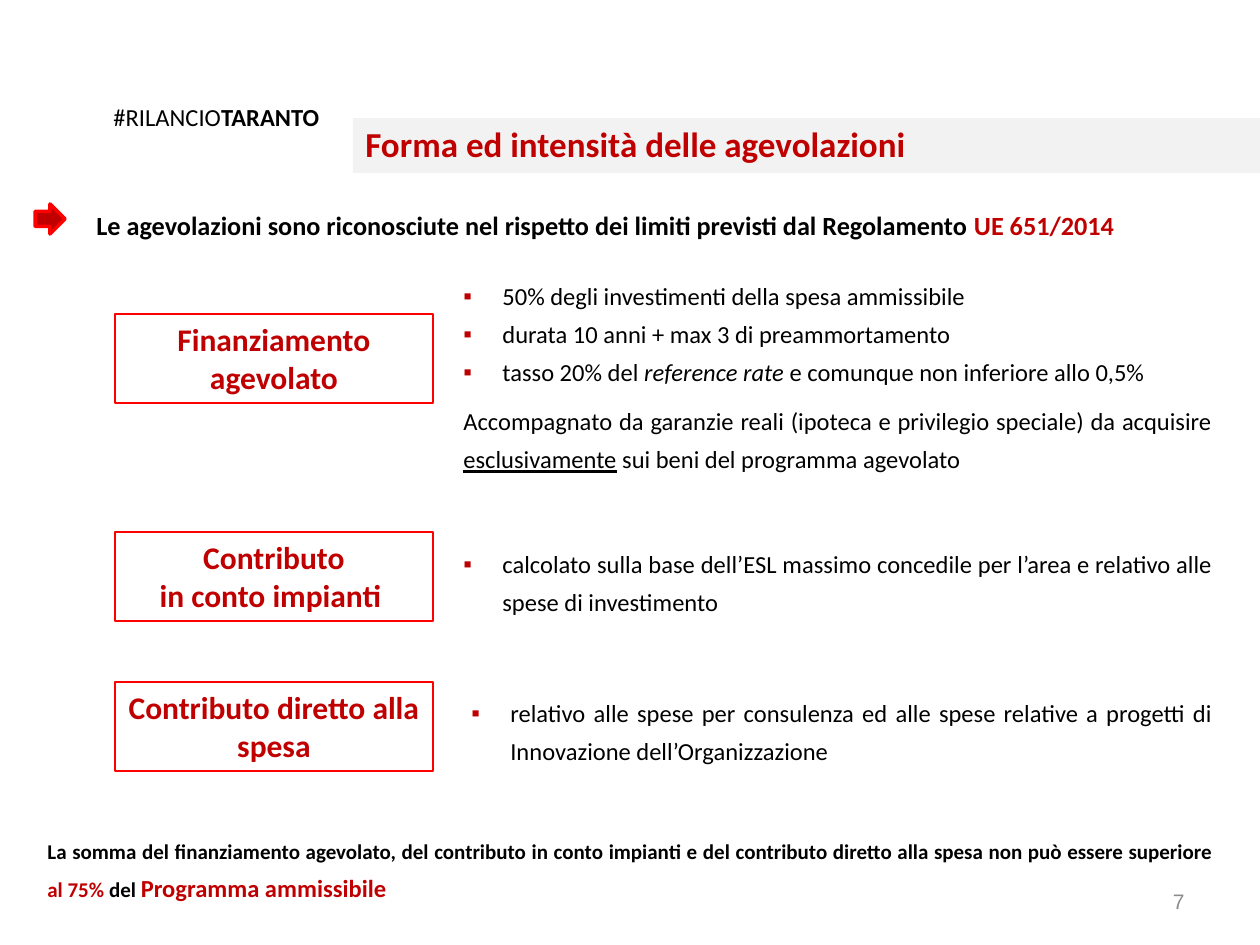
from lxml.etree import SubElement
from pptx import Presentation
from pptx.dml.color import RGBColor
from pptx.enum.shapes import MSO_SHAPE
from pptx.enum.text import MSO_ANCHOR, PP_ALIGN
from pptx.oxml.ns import qn
from pptx.util import Emu, Pt

PX = 914400 / 126
BLACK = RGBColor(0, 0, 0)
DARK_RED = RGBColor(0xC0, 0, 0)
RED = RGBColor(0xFF, 0, 0)
PALE_GREY = RGBColor(0xF2, 0xF2, 0xF2)
GREY = RGBColor(0x8C, 0x8C, 0x8C)

# A paragraph is a list of spans: (text, format that differs from the box)
TAG = [[("#RILANCIO", {}), ("TARANTO", {"bold": True})]]
TITLE = [[("Forma ed intensità delle agevolazioni", {})]]
INTRO = [[
    ("Le agevolazioni sono riconosciute nel rispetto dei limiti previsti dal Regolamento ", {}),
    ("UE 651/2014", {"color": DARK_RED}),
]]
FOOTER = [[
    ("La somma del finanziamento agevolato, del contributo in conto impianti e del "
     "contributo diretto alla spesa non può essere superiore ", {}),
    ("al 75% ", {"color": DARK_RED}),
    ("del ", {}),
    ("Programma ammissibile", {"color": DARK_RED, "size": 14}),
]]
PAGE_NUMBER = [[("7", {})]]

LOAN_TERMS = [
    [("50% degli investimenti della spesa ammissibile", {})],
    [("durata 10 anni + max 3 di preammortamento", {})],
    [("tasso 20% del ", {}), ("reference rate ", {"italic": True}),
     ("e comunque non inferiore allo 0,5%", {})],
    [("Accompagnato da garanzie reali (ipoteca e privilegio speciale) da acquisire ", {}),
     ("esclusivamente", {"underline": True}),
     (" sui beni del programma agevolato", {})],
]
PLANT_TERMS = [[("calcolato sulla base dell’ESL massimo concedile per l’area e relativo "
                 "alle spese di investimento", {})]]
EXPENSE_TERMS = [[("relativo alle spese per consulenza ed alle spese relative a progetti di "
                   "Innovazione dell’Organizzazione", {})]]

# label lines, label top, terms, bulleted paragraphs, terms left, top, height
MEASURES = [
    (["Finanziamento agevolato"], 314, LOAN_TERMS, 3, 451, 266, 217),
    (["Contributo", "in conto impianti "], 532, PLANT_TERMS, 1, 451, 534, 87),
    (["Contributo diretto alla", "spesa"], 682, EXPENSE_TERMS, 1, 459, 683, 89),
]
LABEL_LEFT, LABEL_WIDTH, LABEL_HEIGHT = 115, 318, 89
TERMS_RIGHT = 1225
BULLET_INDENT = 39


def px(value):
    return Emu(round(value * PX))


def add_bullet(paragraph):
    properties = paragraph._p.get_or_add_pPr()
    properties.set("marL", str(px(BULLET_INDENT)))
    properties.set("indent", str(-px(BULLET_INDENT)))
    color = SubElement(properties, qn("a:buClr"))
    SubElement(color, qn("a:srgbClr")).set("val", str(DARK_RED))
    SubElement(properties, qn("a:buFont")).set("typeface", "Arial")
    SubElement(properties, qn("a:buChar")).set("char", "▪")


def write(frame, paragraphs, size=14, color=BLACK, bold=False, font="Calibri",
          align=PP_ALIGN.LEFT, spacing=None, bullets=0, wrap=True, anchor=MSO_ANCHOR.TOP):
    """Fill a text frame; the first `bullets` paragraphs are list items."""
    frame.word_wrap = wrap
    frame.vertical_anchor = anchor
    for index, spans in enumerate(paragraphs):
        paragraph = frame.paragraphs[0] if index == 0 else frame.add_paragraph()
        paragraph.alignment = align
        if spacing:
            paragraph.line_spacing = spacing
        if bullets and index == bullets:
            paragraph.space_before = Pt(6)
        if index < bullets:
            add_bullet(paragraph)
        for text, own in spans:
            span = paragraph.add_run()
            span.text = text
            span.font.name = font
            span.font.size = Pt(own.get("size", size))
            span.font.bold = own.get("bold", bold)
            span.font.italic = own.get("italic", False)
            span.font.underline = own.get("underline", False)
            span.font.color.rgb = own.get("color", color)


def add_text(page, area, paragraphs, **text_format):
    box = page.shapes.add_textbox(*map(px, area))
    write(box.text_frame, paragraphs, **text_format)


def add_panel(page, area, kind=MSO_SHAPE.RECTANGLE, fill=None, line=None, width=0.75):
    panel = page.shapes.add_shape(kind, *map(px, area))
    panel.shadow.inherit = False
    if fill is None:
        panel.fill.background()
    else:
        panel.fill.solid()
        panel.fill.fore_color.rgb = fill
    if line is None:
        panel.line.fill.background()
    else:
        panel.line.color.rgb = line
        panel.line.width = Pt(width)
    return panel


def add_measure(page, label, label_top, terms, bullets, left, top, height):
    panel = add_panel(page, (LABEL_LEFT, label_top, LABEL_WIDTH, LABEL_HEIGHT), line=RED)
    write(panel.text_frame, [[(line, {})] for line in label],
          size=18, color=DARK_RED, bold=True, align=PP_ALIGN.CENTER)
    add_text(page, (left, top, TERMS_RIGHT - left, height), terms,
             align=PP_ALIGN.JUSTIFY, spacing=1.3, bullets=bullets)


def main():
    deck = Presentation()
    deck.slide_width, deck.slide_height = px(1260), px(945)
    page = deck.slides.add_slide(deck.slide_layouts[6])

    add_text(page, (101, 96, 232, 43), TAG, wrap=False)
    add_panel(page, (353, 118, 907, 55), fill=PALE_GREY)
    add_text(page, (353, 116, 893, 55), TITLE, size=20, color=DARK_RED, bold=True)
    add_panel(page, (35, 204, 30, 30), kind=MSO_SHAPE.RIGHT_ARROW,
              fill=DARK_RED, line=RED, width=2)
    add_text(page, (84, 194, 1142, 50), INTRO, size=15, bold=True, spacing=1.3)
    for measure in MEASURES:
        add_measure(page, *measure)
    add_text(page, (35, 825, 1191, 82), FOOTER, size=12, bold=True,
             align=PP_ALIGN.JUSTIFY, spacing=1.3)
    add_text(page, (903, 876, 294, 50), PAGE_NUMBER, size=12, color=GREY, font="Arial",
             align=PP_ALIGN.RIGHT, anchor=MSO_ANCHOR.MIDDLE)
    deck.save("out.pptx")


if __name__ == "__main__":
    main()
